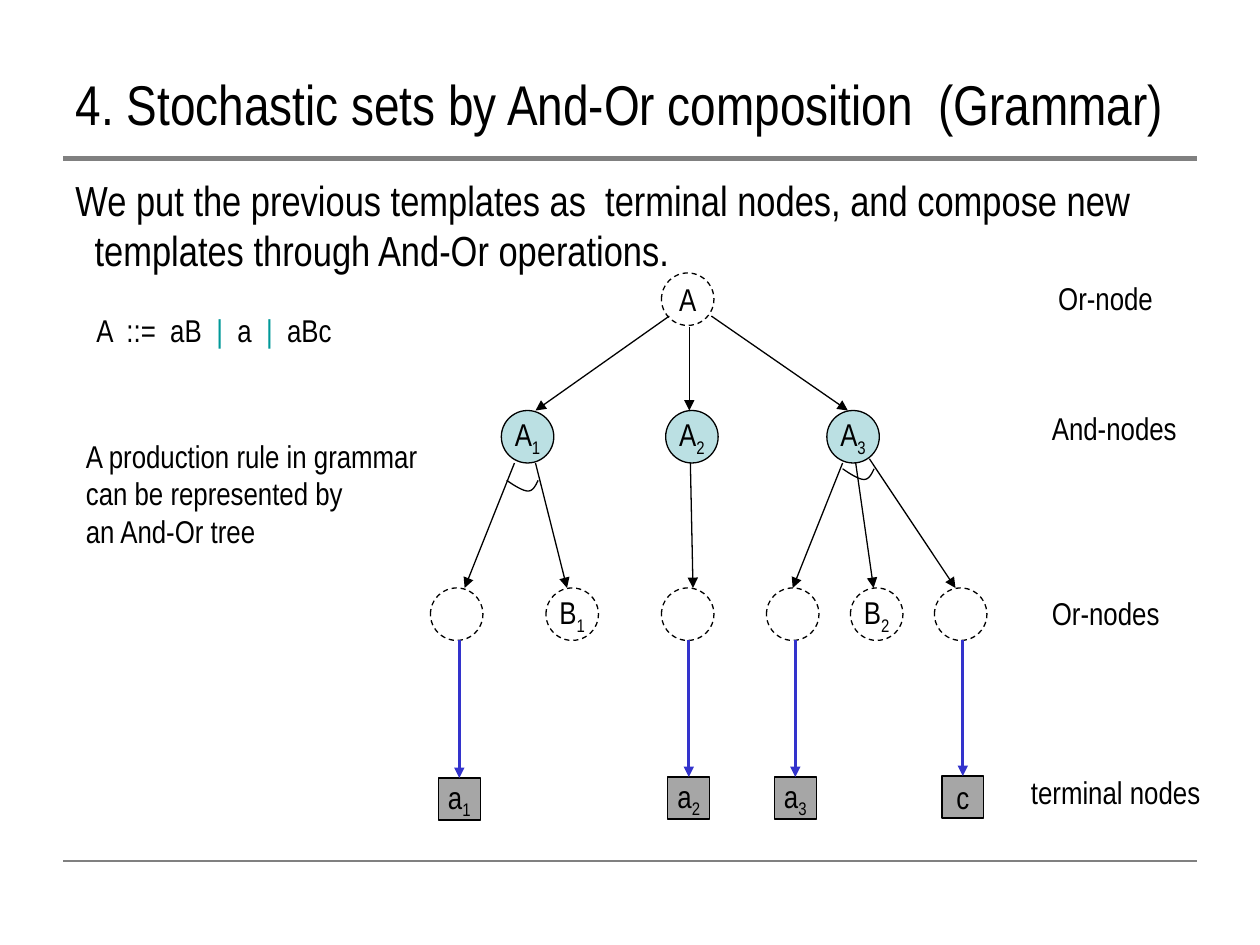
from dataclasses import dataclass
from typing import NamedTuple, Optional

from lxml.etree import SubElement
from pptx import Presentation
from pptx.dml.color import RGBColor
from pptx.enum.dml import MSO_LINE
from pptx.enum.shapes import MSO_CONNECTOR, MSO_SHAPE
from pptx.enum.text import MSO_ANCHOR, MSO_AUTO_SIZE, PP_ALIGN
from pptx.oxml.ns import qn
from pptx.util import Emu, Inches, Pt


@dataclass(frozen=True)
class Theme:
    font: str = "Arial Narrow"
    ink: str = "000000"
    rule: str = "808080"
    accent: str = "009999"
    and_fill: str = "BBE0E3"
    terminal_fill: str = "A6A6A6"
    terminal_arrow: str = "3333CC"
    title: int = 32
    body: int = 24
    label: int = 18
    thin: float = 0.75
    medium: float = 1.5
    thick: float = 3


class Run(NamedTuple):
    text: str
    color: str = "000000"
    sub: bool = False


class Node(NamedTuple):
    col: float
    row: float
    name: str = ""
    index: str = ""


class Label(NamedTuple):
    col: float
    row: float
    cols: float
    rows: float
    lines: list
    size: int = 18


class Edge(NamedTuple):
    x1: float
    y1: float
    x2: float
    y2: float


# Grid of 120 columns by 90 rows
T = Theme()
WIDTH, HEIGHT = Inches(10), Inches(7.5)
COL, ROW = WIDTH / 120, HEIGHT / 90
CIRCLE, SQUARE = 5, 4
AND_ROW, OR_ROW, TERMINAL_ROW = 39.1, 56, 74


def x(cols: float) -> Emu:
    return Emu(round(cols * COL))


def y(rows: float) -> Emu:
    return Emu(round(rows * ROW))


def rgb(color: str) -> RGBColor:
    return RGBColor.from_string(color)


def add_runs(p, runs: list, size: int) -> None:
    for run in runs:
        r = p.add_run()
        r.text = run.text
        r.font.name, r.font.size = T.font, Pt(size)
        r.font.color.rgb = rgb(run.color)
        if run.sub:
            r.font._element.set("baseline", "-25000")


def add_label(s, label: Label, hang: float = 0) -> None:
    tb = s.shapes.add_textbox(x(label.col), y(label.row), x(label.cols), y(label.rows))
    tf = tb.text_frame
    tf.word_wrap = False
    tf.auto_size = MSO_AUTO_SIZE.SHAPE_TO_FIT_TEXT
    for i, runs in enumerate(label.lines):
        p = tf.add_paragraph() if i else tf.paragraphs[0]
        if i and hang:
            p._p.get_or_add_pPr().set("marL", str(x(hang)))
        add_runs(p, runs, label.size)


def add_node(s, node: Node, kind, size: float, fill: Optional[str] = None):
    sp = s.shapes.add_shape(kind, x(node.col), y(node.row), x(size), y(size))
    sp.shadow.inherit = False
    sp.line.color.rgb, sp.line.width = rgb(T.ink), Pt(T.thin)
    if fill:
        sp.fill.solid()
        sp.fill.fore_color.rgb = rgb(fill)
    else:
        sp.fill.background()
        sp.line.dash_style = MSO_LINE.DASH
    if node.name:
        tf = sp.text_frame
        tf.word_wrap = False
        tf.vertical_anchor = MSO_ANCHOR.MIDDLE
        p = tf.paragraphs[0]
        p.alignment = PP_ALIGN.CENTER
        runs = [Run(node.name)]
        if node.index:
            runs.append(Run(node.index, sub=True))
        add_runs(p, runs, T.label)
    return sp


def add_line(s, edge: Edge, color: str, width: float, arrow: bool = True):
    line = s.shapes.add_connector(MSO_CONNECTOR.STRAIGHT, x(edge.x1), y(edge.y1),
                                  x(edge.x2), y(edge.y2))
    line.line.color.rgb, line.line.width = rgb(color), Pt(width)
    if arrow:
        SubElement(line.line._get_or_add_ln(), qn("a:tailEnd"), type="triangle")
    SubElement(line._element.spPr, qn("a:effectLst"))
    return line


def bezier(points: list, t: float) -> tuple:
    weights = ((1 - t) ** 3, 3 * t * (1 - t) ** 2, 3 * t * t * (1 - t), t ** 3)
    return tuple(sum(w * p[axis] for w, p in zip(weights, points)) for axis in (0, 1))


def add_and_arc(s, col: float, row: float, steps: int = 8) -> None:
    curves = ([(0, 0), (0.72, 0.5), (1.56, 1.02), (2.04, 1.02)],
              [(2.04, 1.02), (2.52, 1.02), (2.76, 0.5), (3, 0)])
    points = [bezier(c, i / steps) for c in curves for i in range(1, steps + 1)]
    builder = s.shapes.build_freeform(x(col), y(row))
    builder.add_line_segments([(x(col + dx), y(row + dy)) for dx, dy in points], close=False)
    sp = builder.convert_to_shape()
    sp.shadow.inherit = False
    sp.fill.background()
    sp.line.color.rgb, sp.line.width = rgb(T.ink), Pt(T.thin)


def main() -> None:
    prs = Presentation()
    prs.slide_width, prs.slide_height = WIDTH, HEIGHT
    s = prs.slides.add_slide(prs.slide_layouts[5])

    # Title and rules
    title = s.shapes.title
    title.left, title.top, title.width, title.height = x(6), y(6), x(108), y(6.1)
    tf = title.text_frame
    tf.vertical_anchor, tf.auto_size = MSO_ANCHOR.TOP, MSO_AUTO_SIZE.NONE
    tf.paragraphs[0].alignment = PP_ALIGN.LEFT
    add_runs(tf.paragraphs[0], [Run("4. Stochastic sets by And-Or composition  (Grammar)")], T.title)
    for row, width in ((15.1, T.thick), (82, T.thin)):
        add_line(s, Edge(6, row, 114, row), T.rule, width, arrow=False)

    # Introduction, grammar rule and remark
    add_label(s, Label(6, 16, 105, 10.9, [
        [Run("We put the previous templates as  terminal nodes, and compose new")],
        [Run("templates through And-Or operations.")]], T.body), hang=1.83)
    bar = Run("|", T.accent)
    add_label(s, Label(8, 29, 26.4, 4.8, [
        [Run("A  ::=  aB  "), bar, Run("  a  "), bar, Run("  aBc")]]))
    add_label(s, Label(7, 41, 34.3, 12.1, [
        [Run("A production rule in grammar")],
        [Run("can be represented by")],
        [Run("an And-Or tree")]]))

    # Names of the tree levels
    for col, row, cols, text in ((99.6, 26, 11.4, "Or-node"), (99, 38.4, 14.4, "And-nodes"),
                                 (99, OR_ROW, 12.7, "Or-nodes"), (97, 73, 18.6, "terminal nodes")):
        add_label(s, Label(col, row, cols, 4.8, [[Run(text)]]))

    # Or-nodes and And-nodes
    or_nodes = [Node(63, 26, "A"), Node(41, OR_ROW), Node(52, OR_ROW, "B", "1"),
                Node(63, OR_ROW), Node(73, OR_ROW), Node(81, OR_ROW, "B", "2"), Node(89, OR_ROW)]
    for node in or_nodes:
        add_node(s, node, MSO_SHAPE.OVAL, CIRCLE)
    for i, col in enumerate((47.75, 63.4, 78.75), 1):
        add_node(s, Node(col, AND_ROW, "A", str(i)), MSO_SHAPE.OVAL, CIRCLE, T.and_fill)

    # Branches from the root and from each And-node
    and_bottom = AND_ROW + CIRCLE
    edges = [Edge(63.75, 30.1, 51, AND_ROW), Edge(65.65, 31.1, 65.65, AND_ROW),
             Edge(67.75, 30.1, 80.75, AND_ROW), Edge(82.8, 43.7, 91, OR_ROW)]
    edges += [Edge(start, and_bottom, end, OR_ROW) for start, end in
              ((49, 44.25), (51, 54), (65.75, 66), (80.25, 75.5), (81.5, 83.2))]
    for edge in edges:
        add_line(s, edge, T.ink, T.thin)
    add_and_arc(s, 48.25, 45.75)
    add_and_arc(s, 80.25, 44.65)

    # Terminal nodes, each under its Or-node
    for node in (Node(41.75, TERMINAL_ROW + 0.1, "a", "1"), Node(63.6, TERMINAL_ROW, "a", "2"),
                 Node(73.75, TERMINAL_ROW, "a", "3"), Node(89.7, TERMINAL_ROW - 0.1, "c")):
        square = add_node(s, node, MSO_SHAPE.RECTANGLE, SQUARE, T.terminal_fill)
        middle = node.col + SQUARE / 2
        arrow = add_line(s, Edge(middle, OR_ROW + CIRCLE, middle, node.row),
                         T.terminal_arrow, T.medium)
        arrow.end_connect(square, 0)

    prs.save("out.pptx")


if __name__ == "__main__":
    main()
